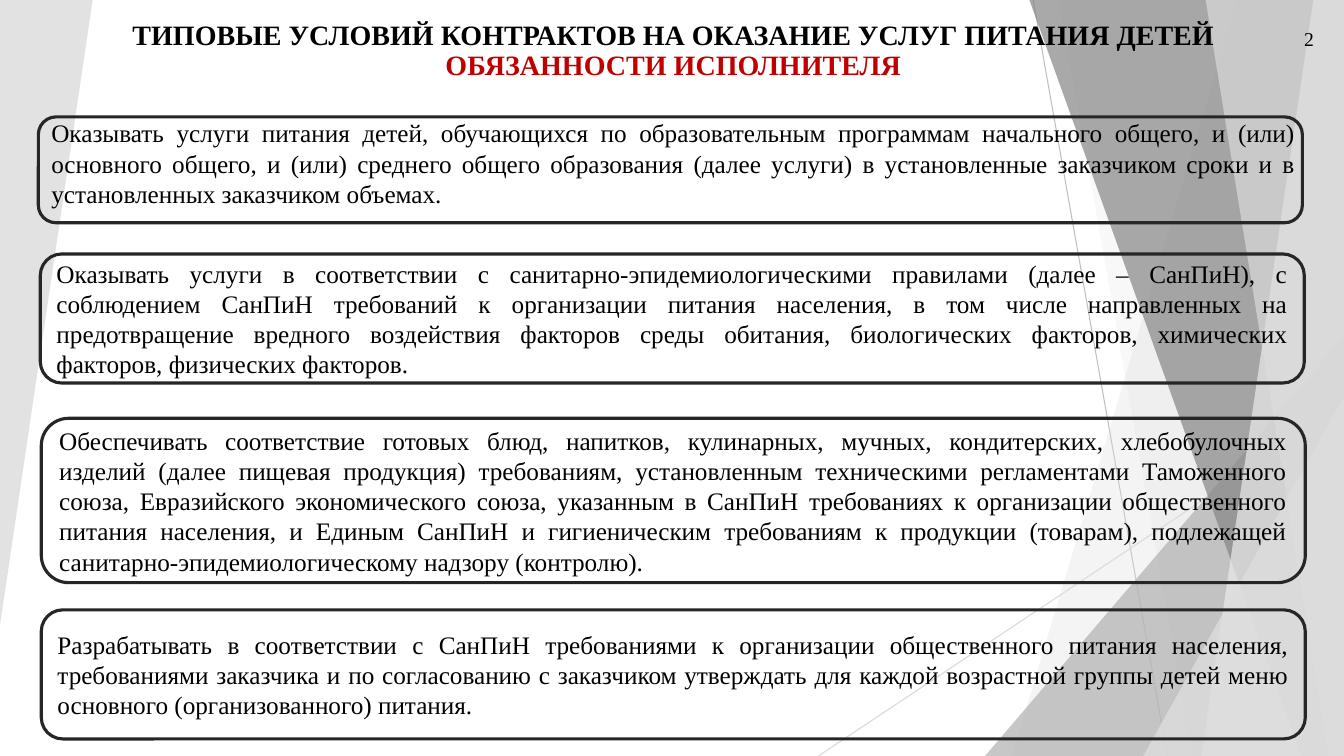
from lxml.etree import SubElement
from pptx import Presentation
from pptx.dml.color import RGBColor
from pptx.enum.shapes import MSO_CONNECTOR as CONN, MSO_SHAPE as SHAPE
from pptx.enum.text import MSO_ANCHOR as ANCHOR, MSO_AUTO_SIZE as AUTO, PP_ALIGN as ALIGN
from pptx.oxml.ns import qn
from pptx.util import Pt

W, H = 960, 540
FONT = "Times New Roman"
COLORS = {
    "text": "000000", "accent": "C00000", "border": "262626",
    "line": "BFBFBF", "pale_line": "D9D9D9",
    "light": "DDDDDD", "mid": "B2B2B2", "dark": "858585", "pale": "EBEBEB",
}
TITLE = [
    ("ТИПОВЫЕ УСЛОВИЙ КОНТРАКТОВ НА ОКАЗАНИЕ УСЛУГ ПИТАНИЯ ДЕТЕЙ", "text"),
    ("ОБЯЗАННОСТИ ИСПОЛНИТЕЛЯ", "accent"),
]
FIRST_DUTY = (
    "Оказывать услуги питания детей, обучающихся по образовательным программам "
    "начального общего, и (или) основного общего, и (или) среднего общего образования "
    "(далее услуги) в установленные заказчиком сроки и в установленных заказчиком объемах."
)
DUTIES = [
    ((28.8, 181.4, 902.9, 92.2),
     "Оказывать услуги в соответствии с санитарно-эпидемиологическими правилами "
     "(далее – СанПиН), с соблюдением СанПиН требований к организации питания населения, "
     "в том числе направленных на предотвращение вредного воздействия факторов среды "
     "обитания, биологических факторов, химических факторов, физических факторов."),
    ((29.5, 298.8, 902.9, 117.4),
     "Обеспечивать соответствие готовых блюд, напитков, кулинарных, мучных, кондитерских, "
     "хлебобулочных изделий (далее пищевая продукция) требованиям, установленным "
     "техническими регламентами Таможенного союза, Евразийского экономического союза, "
     "указанным в СанПиН требованиях к организации общественного питания населения, и "
     "Единым СанПиН и гигиеническим требованиям к продукции (товарам), подлежащей "
     "санитарно-эпидемиологическому надзору (контролю)."),
    ((29.5, 435.6, 902.9, 92.2),
     "Разрабатывать в соответствии с СанПиН требованиями к организации общественного "
     "питания населения, требованиями заказчика и по согласованию с заказчиком утверждать "
     "для каждой возрастной группы детей меню основного (организованного) питания."),
]


def rgb(name):
    """Return the named colour."""
    return RGBColor.from_string(COLORS[name])


def paint(sp, color, opacity):
    """Give a shape a translucent fill without outline or shadow."""
    sp.shadow.inherit = False
    sp.fill.solid()
    sp.fill.fore_color.rgb = rgb(color)
    sp.line.fill.background()
    fill = sp.fill._xPr.find(qn("a:solidFill"))
    SubElement(fill[0], qn("a:alpha")).set("val", str(opacity * 1000))


def add_line(slide, x1, y1, x2, y2, color):
    """Draw a thin line without a shadow."""
    line = slide.shapes.add_connector(CONN.STRAIGHT, Pt(x1), Pt(y1), Pt(x2), Pt(y2))
    line.line.color.rgb = rgb(color)
    line.line.width = Pt(0.75)
    SubElement(line._element.spPr, qn("a:effectLst"))


def add_band(slide, top_x, bottom_x, color, opacity):
    """Draw a full-height band from a slanted edge to the right slide edge."""
    top = Pt(-0.6)
    fb = slide.shapes.build_freeform(Pt(top_x), top)
    fb.add_line_segments([(Pt(W), top), (Pt(W), Pt(H)), (Pt(bottom_x), Pt(H))], close=True)
    paint(fb.convert_to_shape(), color, opacity)


def add_wedge(slide, box, color, opacity, rotation=0):
    """Draw a right-angled triangle with its apex at the right."""
    sp = slide.shapes.add_shape(SHAPE.ISOSCELES_TRIANGLE, *map(Pt, box))
    sp.adjustments[0] = 1
    sp.rotation = rotation
    paint(sp, color, opacity)


def add_backdrop(slide):
    """Draw the faceted background from back to front."""
    add_line(slide, 738, 0, 833.8, H, "line")
    add_line(slide, W, 290.2, 584.6, H, "pale_line")
    add_band(slide, 884.2, 722.9, "light", 30)
    add_band(slide, 756, 851.8, "light", 20)
    add_wedge(slide, (703.6, 240, 256.4, 300), "mid", 72)
    add_band(slide, 735.1, 929.5, "dark", 70)
    add_band(slide, 938.2, 858.2, "pale", 70)
    add_band(slide, 861.1, 949, "light", 65)
    add_wedge(slide, (816.6, 283, 143.4, 257), "light", 80)
    add_wedge(slide, (0, 0, 66.2, 446.4), "light", 85, 180)


def write(p, text, size, color="text", bold=False, align=ALIGN.JUSTIFY):
    """Add a formatted run to a paragraph."""
    p.alignment = align
    r = p.add_run()
    r.text = text
    r.font.name = FONT
    r.font.size = Pt(size)
    r.font.bold = bold
    r.font.color.rgb = rgb(color)


def add_text_box(slide, box, wrap=True, auto_size=AUTO.NONE):
    """Add a text box and return its text frame."""
    tf = slide.shapes.add_textbox(*map(Pt, box)).text_frame
    tf.word_wrap = wrap
    tf.auto_size = auto_size
    return tf


def add_frame(slide, box):
    """Draw a rounded outline and return its text frame."""
    sp = slide.shapes.add_shape(SHAPE.ROUNDED_RECTANGLE, *map(Pt, box))
    sp.shadow.inherit = False
    sp.fill.background()
    sp.line.color.rgb = rgb("border")
    sp.line.width = Pt(2.25)
    tf = sp.text_frame
    tf.word_wrap = True
    tf.vertical_anchor = ANCHOR.MIDDLE
    return tf


def add_first_duty(slide, box):
    """Draw the first frame with its text box slightly offset."""
    x, y, w, h = box
    add_frame(slide, box)
    tf = add_text_box(slide, (x + 2.2, y - 2.9, w, h - 2.9), auto_size=AUTO.SHAPE_TO_FIT_TEXT)
    write(tf.paragraphs[0], FIRST_DUTY, 18)


def add_title(slide, box):
    """Write the two-line heading."""
    tf = add_text_box(slide, box)
    for i, (text, color) in enumerate(TITLE):
        p = tf.add_paragraph() if i else tf.paragraphs[0]
        p.line_spacing = 0.9
        write(p, text, 20, color, True, ALIGN.CENTER)


def add_page_number(slide, box):
    """Write the page number."""
    tf = add_text_box(slide, box, False, AUTO.SHAPE_TO_FIT_TEXT)
    write(tf.paragraphs[0], "2", 14, align=ALIGN.LEFT)


def main():
    """Build and save the slide."""
    prs = Presentation()
    prs.slide_width, prs.slide_height = Pt(W), Pt(H)
    slide = prs.slides.add_slide(prs.slide_layouts[6])
    add_backdrop(slide)
    add_first_duty(slide, (27.4, 83.5, 902.9, 75.6))
    add_title(slide, (84.2, 11.5, 793.4, 61.2))
    for box, text in DUTIES:
        write(add_frame(slide, box).paragraphs[0], text, 18)
    add_page_number(slide, (924.5, 15.8, 21.6, 24.5))
    prs.save("out.pptx")


if __name__ == "__main__":
    main()
